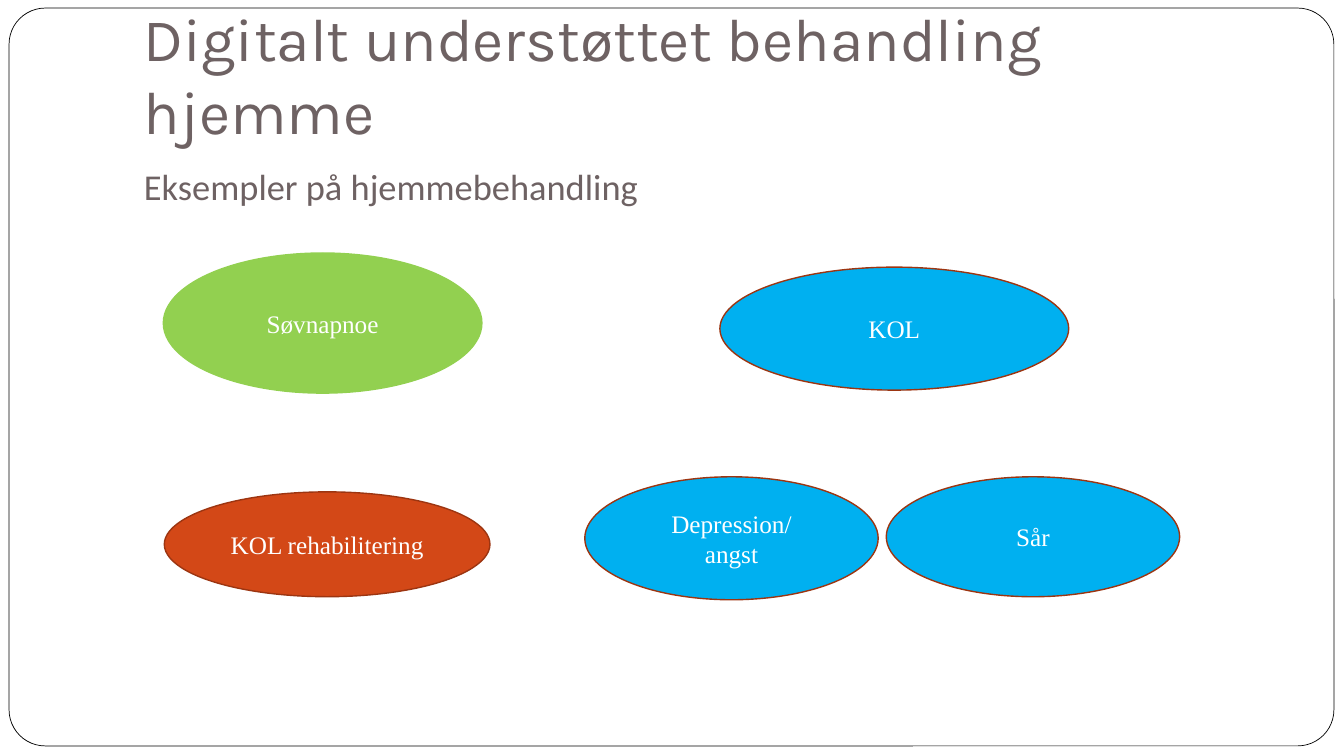
import pptx
import pptx.dml.color
import pptx.enum.shapes
import pptx.enum.text
import pptx.util
from pptx.util import Inches

SHAPES = pptx.enum.shapes.MSO_SHAPE
ANCHORS = pptx.enum.text.MSO_ANCHOR
ALIGNMENTS = pptx.enum.text.PP_ALIGN

WHITE = "FFFFFF"
GREY = "6E6263"
BLUE = "00B0F0"
GREEN = "92D050"
ORANGE = "D34817"
BROWN = "9C3511"

TREATMENTS = [
    ("KOL rehabilitering", (1.63, 4.88, 3.23, 1.04), ORANGE, BROWN),
    ("KOL", (7.14, 2.65, 3.46, 1.22), BLUE, BROWN),
    ("Søvnapnoe", (1.62, 2.51, 3.16, 1.39), GREEN, GREEN),
    ("Depression/\nangst", (5.8, 4.73, 2.91, 1.22), BLUE, BROWN),
    ("Sår", (8.79, 4.73, 2.91, 1.19), BLUE, BROWN),
]


def color(value):
    return pptx.dml.color.RGBColor.from_string(value)


def write_text(text_frame, text, font_name, size, font_color, alignment):
    text_frame.word_wrap = True
    text_frame.text = text
    for paragraph in text_frame.paragraphs:
        paragraph.alignment = alignment
        paragraph.font.name = font_name
        paragraph.font.size = pptx.util.Pt(size)
        paragraph.font.color.rgb = color(font_color)


def add_shape(slide, kind, box, fill, line, line_width):
    shape = slide.shapes.add_shape(kind, *map(Inches, box))
    shape.shadow.inherit = False
    shape.fill.solid()
    shape.fill.fore_color.rgb = color(fill)
    shape.line.color.rgb = color(line)
    shape.line.width = pptx.util.Pt(line_width)
    return shape


def add_frame(slide):
    frame = add_shape(slide, SHAPES.ROUNDED_RECTANGLE, (0.09, 0.08, 13.14, 7.32), WHITE, "000000", 0.5)
    frame.adjustments[0] = 0.049


def add_heading(slide, text, box, font_name, size, anchor, bottom_inset):
    text_frame = slide.shapes.add_textbox(*map(Inches, box)).text_frame
    text_frame.vertical_anchor = anchor
    text_frame.margin_bottom = Inches(bottom_inset)
    write_text(text_frame, text, font_name, size, GREY, ALIGNMENTS.LEFT)


def add_treatment(slide, text, box, fill, line):
    ellipse = add_shape(slide, SHAPES.OVAL, box, fill, line, 1)
    ellipse.text_frame.vertical_anchor = ANCHORS.MIDDLE
    write_text(ellipse.text_frame, text, "Times New Roman", 18, WHITE, ALIGNMENTS.CENTER)


def main():
    presentation = pptx.Presentation()
    presentation.slide_width = Inches(13.33)
    presentation.slide_height = Inches(7.5)
    slide = presentation.slides.add_slide(presentation.slide_layouts[6])
    add_frame(slide)
    add_heading(slide, "Digitalt understøttet behandling hjemme",
                (1.33, 0.3, 11.33, 1.25), "Karla", 43.2, ANCHORS.BOTTOM, 0.1)
    add_heading(slide, "Eksempler på hjemmebehandling",
                (1.33, 1.58, 11.33, 5), "Calibri", 26, ANCHORS.TOP, 0.05)
    for treatment in TREATMENTS:
        add_treatment(slide, *treatment)
    presentation.save("out.pptx")


if __name__ == "__main__":
    main()
